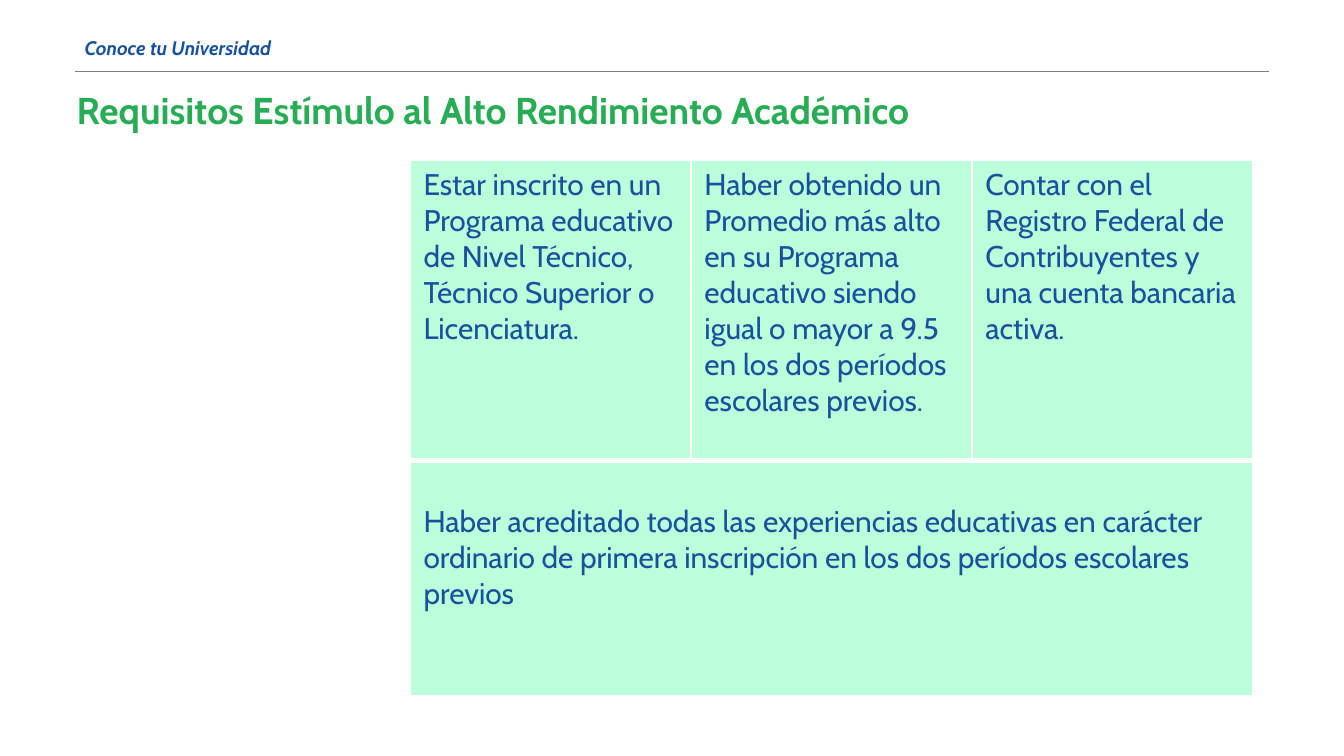
from dataclasses import dataclass

from lxml.etree import SubElement
from pptx import Presentation
from pptx.dml.color import RGBColor
from pptx.enum.shapes import MSO_CONNECTOR
from pptx.enum.text import MSO_ANCHOR, MSO_AUTO_SIZE, PP_ALIGN
from pptx.oxml.ns import qn
from pptx.util import Cm, Pt


@dataclass(frozen=True)
class Theme:
    font: str = "Cabin"
    blue: str = "18529D"
    green: str = "28AD56"
    mint: str = "BBFFDB"
    gray: str = "808080"
    white: str = "FFFFFF"
    header_size: float = 10.5
    title_size: float = 20
    body_size: float = 16
    thin: float = 1
    thick: float = 3


THEME = Theme()
REQUIREMENTS = [
    "Estar inscrito en un Programa educativo de Nivel Técnico, Técnico Superior o Licenciatura.",
    "Haber obtenido un Promedio más alto en su Programa educativo siendo igual o mayor a 9.5 "
    "en los dos períodos escolares previos.",
    "Contar con el Registro Federal de Contribuyentes y una cuenta bancaria activa.",
]
FINAL_REQUIREMENT = (
    "Haber acreditado todas las experiencias educativas en carácter ordinario "
    "de primera inscripción en los dos períodos escolares previos"
)


def write_text(frame, text, size=THEME.body_size, color=THEME.blue,
               bold=False, italic=False, line_spacing=None):
    paragraph = frame.paragraphs[0]
    paragraph.alignment = PP_ALIGN.LEFT
    if line_spacing:
        paragraph.line_spacing = Pt(line_spacing)
    run = paragraph.add_run()
    run.text = text
    font = run.font
    font.name = THEME.font
    font.size = Pt(size)
    font.bold = bold
    font.italic = italic
    font.color.rgb = RGBColor.from_string(color)


def prepare_frame(frame, anchor):
    frame.word_wrap = True
    frame.auto_size = MSO_AUTO_SIZE.NONE
    frame.vertical_anchor = anchor
    frame.margin_left = frame.margin_right = Cm(0.2)
    frame.margin_top = frame.margin_bottom = Cm(0.1)


def add_header(slide):
    rule = slide.shapes.add_connector(
        MSO_CONNECTOR.STRAIGHT, Cm(1.42), Cm(1.35), Cm(23.98), Cm(1.35))
    rule.line.color.rgb = RGBColor.from_string(THEME.gray)
    rule.line.width = Pt(0.75)
    SubElement(rule.element.spPr, qn("a:effectLst"))
    header = slide.shapes.add_textbox(Cm(1.4), Cm(0.51), Cm(21.31), Cm(0.79))
    prepare_frame(header.text_frame, MSO_ANCHOR.MIDDLE)
    write_text(header.text_frame, "Conoce tu Universidad",
               size=THEME.header_size, bold=True, italic=True)


def set_title(slide):
    title = slide.shapes.title
    title.left, title.top = Cm(1.25), Cm(1.6)
    title.width, title.height = Cm(20.85), Cm(1.75)
    prepare_frame(title.text_frame, MSO_ANCHOR.TOP)
    write_text(title.text_frame, "Requisitos Estímulo al Alto Rendimiento Académico",
               size=THEME.title_size, color=THEME.green, bold=True, line_spacing=22.4)


def set_border(cell, edge, width):
    properties = cell._tc.get_or_add_tcPr()
    line = SubElement(properties, qn(f"a:ln{edge}"), w=str(Pt(width)))
    fill = SubElement(line, qn("a:solidFill"))
    SubElement(fill, qn("a:srgbClr"), val=THEME.white)


def style_cell(cell, top, bottom):
    for edge, width in zip("LRTB", (THEME.thin, THEME.thin, top, bottom)):
        set_border(cell, edge, width)
    cell.fill.solid()
    cell.fill.fore_color.rgb = RGBColor.from_string(THEME.mint)
    cell.vertical_anchor = MSO_ANCHOR.TOP


def add_requirements(slide):
    row_heights = (Cm(5.69), Cm(4.45))
    table = slide.shapes.add_table(
        2, len(REQUIREMENTS), Cm(7.75), Cm(3.02), Cm(15.93), sum(row_heights)).table
    table.first_row = table.horz_banding = False
    for row, height in zip(table.rows, row_heights):
        row.height = height
    for column, text in enumerate(REQUIREMENTS):
        upper, lower = table.cell(0, column), table.cell(1, column)
        style_cell(upper, THEME.thin, THEME.thick)
        style_cell(lower, THEME.thick, THEME.thin)
        write_text(upper.text_frame, text)
    final = table.cell(1, 0)
    final.merge(table.cell(1, len(REQUIREMENTS) - 1))
    final.margin_top = Cm(0.81)
    write_text(final.text_frame, FINAL_REQUIREMENT)


def main():
    presentation = Presentation()
    presentation.slide_width = Cm(25.4)
    presentation.slide_height = Cm(14.29)
    slide = presentation.slides.add_slide(
        presentation.slide_layouts.get_by_name("Title Only"))
    add_header(slide)
    set_title(slide)
    add_requirements(slide)
    presentation.save("out.pptx")


if __name__ == "__main__":
    main()
